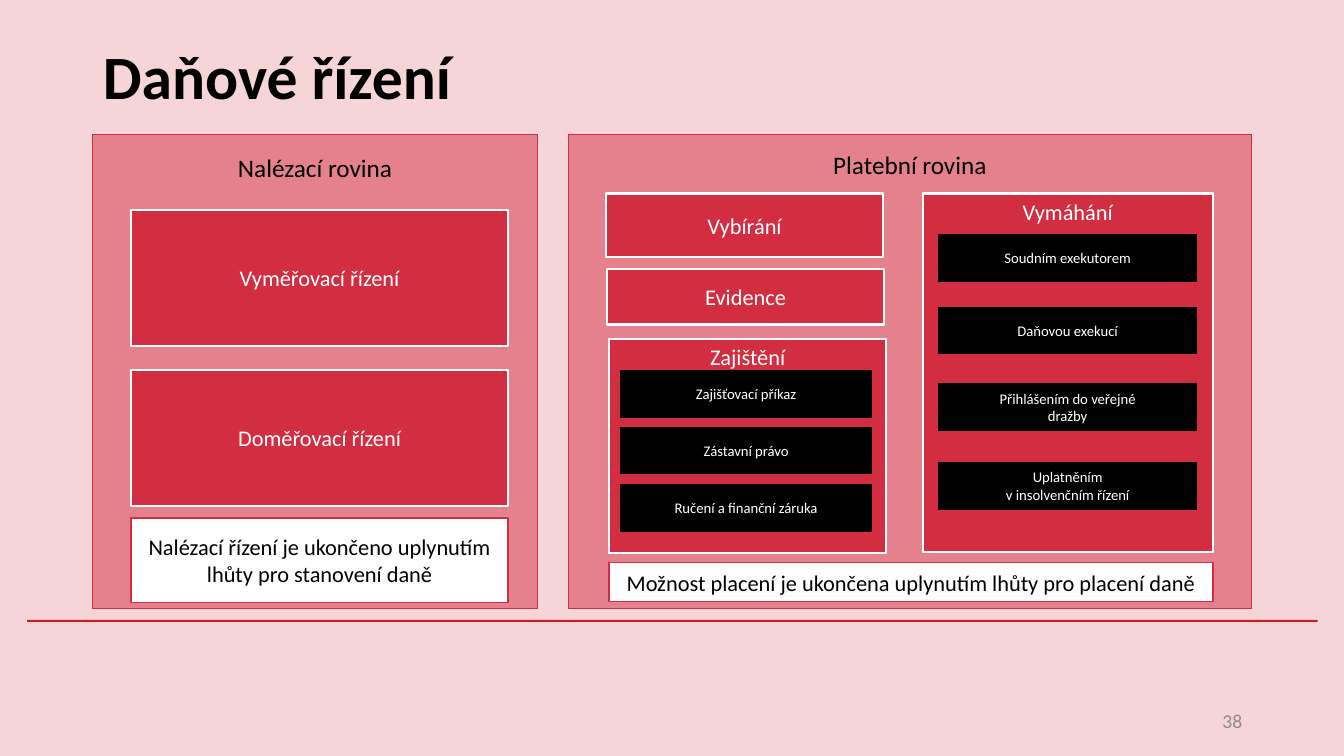
from dataclasses import dataclass

from pptx import Presentation
from pptx.dml.color import RGBColor
from pptx.enum.shapes import MSO_SHAPE
from pptx.enum.text import MSO_ANCHOR, MSO_AUTO_SIZE, PP_ALIGN
from pptx.slide import Slide
from pptx.text.text import TextFrame
from pptx.util import Inches, Pt

CELL = 0.1  # inches per grid column and row


@dataclass(frozen=True)
class Theme:
    font: str = "Calibri"
    back: str = "F6D5D9"
    pink: str = "E4818C"
    red: str = "D22D40"
    rule: str = "CD1F21"
    white: str = "FFFFFF"
    black: str = "000000"
    gray: str = "8C8C8C"
    title: float = 44
    head: float = 18
    card: float = 16
    page: float = 14
    chip: float = 10.5


@dataclass(frozen=True)
class Style:
    fill: str
    line: str
    width: float
    ink: str
    size: float
    anchor: MSO_ANCHOR = MSO_ANCHOR.MIDDLE
    wrap: bool = True
    inset: float = 0.5


@dataclass(frozen=True)
class Box:
    col: float
    row: float
    cols: float
    rows: float
    text: str
    style: Style


T = Theme()
TOP = MSO_ANCHOR.TOP
LEFT = Style(T.pink, T.red, 0.5, T.black, T.head, TOP, inset=1.85)
RIGHT = Style(T.pink, T.red, 0.5, T.black, T.head, TOP, inset=1.5)
CARD = Style(T.red, T.white, 1.5, T.white, T.card)
GROUP = Style(T.red, T.white, 1.5, T.white, T.card, TOP)
CHIP = Style(T.black, T.black, 1, T.white, T.chip, wrap=False)
NOTE = Style(T.white, T.red, 1, T.black, T.card, wrap=False)


def grid(n: float) -> int:
    return Inches(n * CELL)


def rgb(code: str) -> RGBColor:
    return RGBColor.from_string(code)


def write(frame: TextFrame, text: str, ink: str, size: float,
          align: PP_ALIGN, bold: bool = False, **form) -> None:
    form = {"auto_size": MSO_AUTO_SIZE.NONE, "word_wrap": True,
            "vertical_anchor": MSO_ANCHOR.MIDDLE} | form
    for key, val in form.items():
        setattr(frame, key, val)
    frame.text = text
    look = {"name": T.font, "size": Pt(size), "bold": bold}
    for para in frame.paragraphs:
        para.alignment = align
        for run in para.runs:
            run.font.color.rgb = rgb(ink)
            for key, val in look.items():
                setattr(run.font, key, val)


def draw(slide: Slide, box: Box) -> None:
    style = box.style
    spot = map(grid, (box.col, box.row, box.cols, box.rows))
    shape = slide.shapes.add_shape(MSO_SHAPE.RECTANGLE, *spot)
    shape.shadow.inherit = False
    shape.fill.solid()
    shape.fill.fore_color.rgb = rgb(style.fill)
    if style.width:
        shape.line.color.rgb = rgb(style.line)
        shape.line.width = Pt(style.width)
    else:
        shape.line.fill.background()
    if box.text:
        write(shape.text_frame, box.text, style.ink, style.size, PP_ALIGN.CENTER,
              vertical_anchor=style.anchor, word_wrap=style.wrap,
              margin_top=grid(style.inset))


def stack(col: float, cols: float, rows: float, tops: tuple[float, ...],
          texts: tuple[str, ...], style: Style) -> list[Box]:
    return [Box(col, top, cols, rows, text, style)
            for top, text in zip(tops, texts)]


RULE = Box(2.7, 61.5, 128, 0.2, "", Style(T.rule, T.rule, 0, T.black, T.card))

BOXES = [
    RULE,
    # Assessment panel
    Box(9.2, 13.3, 44.1, 47.1, "Nalézací rovina", LEFT),
    *stack(13, 37.4, 13.5, (20.8, 36.7),
           ("Vyměřovací řízení", "Doměřovací řízení"), CARD),
    Box(13, 51.4, 37.4, 8.4,
        "Nalézací řízení je ukončeno uplynutím\nlhůty pro stanovení daně", NOTE),
    # Payment panel
    Box(56.4, 13.3, 67.7, 47.1, "Platební rovina", RIGHT),
    Box(60.1, 19.2, 27.5, 6.3, "Vybírání", CARD),
    Box(60.2, 26.7, 27.5, 5.5, "Evidence", CARD),
    Box(60.4, 33.6, 27.5, 21.3, "Zajištění", GROUP),
    *stack(61.6, 24.8, 4.6, (36.8, 42.4, 48.1),
           ("Zajišťovací příkaz", "Zástavní právo", "Ručení a finanční záruka"),
           CHIP),
    Box(91.5, 19.2, 28.8, 35.6, "Vymáhání", GROUP),
    *stack(93.1, 25.6, 4.6, (23.3, 30.5, 38.1, 45.9),
           ("Soudním exekutorem", "Daňovou exekucí",
            "Přihlášením do veřejné\ndražby",
            "Uplatněním\nv insolvenčním řízení"), CHIP),
    Box(60.4, 55.8, 59.9, 3.9,
        "Možnost placení je ukončena uplynutím lhůty pro placení daně", NOTE),
]


def main() -> None:
    deck = Presentation()
    deck.slide_width, deck.slide_height = Inches(13.33), Inches(7.5)
    slide = deck.slides.add_slide(deck.slide_layouts[5])
    slide.background.fill.solid()
    slide.background.fill.fore_color.rgb = rgb(T.back)

    # Title
    title = slide.shapes.title
    place = {"left": 9.2, "top": 0.2, "width": 115, "height": 14.5}
    for key, val in place.items():
        setattr(title, key, grid(val))
    write(title.text_frame, "Daňové řízení", T.black, T.title,
          PP_ALIGN.LEFT, bold=True)

    # Panels, cards and notes
    for box in BOXES:
        draw(slide, box)

    # Page number
    page = slide.shapes.add_textbox(*map(grid, (94.2, 69.5, 30, 4)))
    write(page.text_frame, "38", T.gray, T.page, PP_ALIGN.RIGHT)

    deck.save("out.pptx")


if __name__ == "__main__":
    main()
